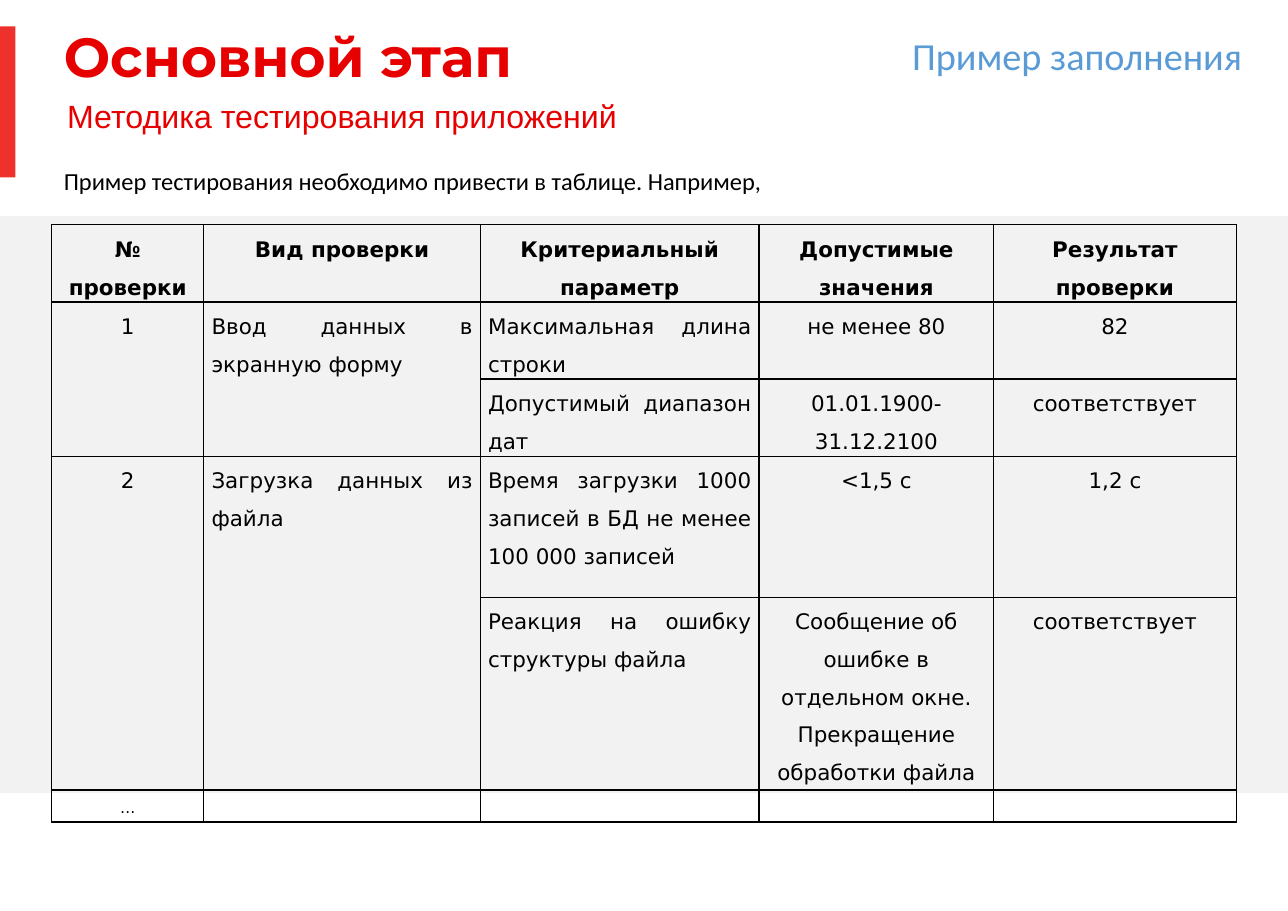
"""Build the slide with a sample table of software test checks."""
import dataclasses
import typing

import lxml.etree
import pptx
import pptx.dml.color
import pptx.enum.shapes
import pptx.enum.text
import pptx.oxml.ns
import pptx.shapes.shapetree
import pptx.table
import pptx.text.text
import pptx.util

SCALE = 9144
ALIGN = pptx.enum.text.PP_ALIGN
ANCHOR = pptx.enum.text.MSO_ANCHOR


@dataclasses.dataclass(frozen=True)
class Theme:
    band: str = "F2F2F2"
    bar: str = "EE312C"
    red: str = "E60000"
    blue: str = "5B9BD5"
    ink: str = "000000"
    title: int = 36
    hint: int = 25
    topic: int = 21
    intro: int = 16
    cell: int = 14
    small: int = 10
    rule: int = 1


class Block(typing.NamedTuple):
    box: tuple[int, int, int, int]
    fill: str


class Label(typing.NamedTuple):
    box: tuple[int, int, int, int]
    text: str
    face: str
    size: int
    color: str
    pad: tuple[int, int] = (11, 6)
    anchor: ANCHOR = ANCHOR.TOP
    align: ALIGN = ALIGN.LEFT
    space: float = 1.0
    bold: bool = False


THEME = Theme()
BLOCKS = [
    Block((0, 196, 1169, 524), THEME.band),
    Block((0, 24, 14, 137), THEME.bar),
]
LABELS = [
    Label((58, 27, 700, 56), "Основной этап", "Montserrat", THEME.title, THEME.red,
          pad=(0, 0), space=0.9, bold=True),
    Label((47, 145, 1074, 40),
          "Пример тестирования необходимо привести в таблице. Например,",
          "Calibri", THEME.intro, THEME.ink),
    Label((50, 47, 1064, 81), "Методика тестирования приложений", "Arial",
          THEME.topic, THEME.red, anchor=ANCHOR.BOTTOM, space=0.8),
    Label((805, 24, 345, 52), "Пример заполнения", "Calibri", THEME.hint,
          THEME.blue, pad=(10, 5), align=ALIGN.CENTER),
]
PLACE = (47, 204)
COLS = [138, 251, 253, 213, 220]
ROWS = [68, 69, 69, 128, 171, 29]
CELLS = [
    ["№ проверки", "Вид проверки", "Критериальный параметр",
     "Допустимые значения", "Результат проверки"],
    ["1", "Ввод данных в экранную форму", "Максимальная длина строки",
     "не менее 80", "82"],
    ["", "", "Допустимый диапазон дат", "01.01.1900-31.12.2100", "соответствует"],
    ["2", "Загрузка данных из файла",
     "Время загрузки 1000 записей в БД не менее 100 000 записей",
     "<1,5 с", "1,2 с"],
    ["", "", "Реакция на ошибку структуры файла",
     "Сообщение об ошибке в отдельном окне.\nПрекращение обработки файла",
     "соответствует"],
    ["…", "", "", "", ""],
]


def px(size: int) -> pptx.util.Emu:
    """Turn a length in px into EMU."""
    return pptx.util.Emu(size * SCALE)


def rgb(code: str) -> pptx.dml.color.RGBColor:
    """Turn a hex code into a colour."""
    return pptx.dml.color.RGBColor.from_string(code)


def write(frame: pptx.text.text.TextFrame, text: str, *, face: str, size: int,
          color: str, align: ALIGN, space: float, bold: bool = False) -> None:
    """Fill a text frame, one paragraph for each line of text."""
    for rank, line in enumerate(text.split("\n")):
        para = frame.add_paragraph() if rank else frame.paragraphs[0]
        para.alignment = align
        para.line_spacing = space
        if not line:
            lxml.etree.SubElement(para._p, pptx.oxml.ns.qn("a:endParaRPr"),
                                  sz=str(size * 100))
            continue
        run = para.add_run()
        run.text = line
        run.font.name = face
        run.font.size = pptx.util.Pt(size)
        run.font.bold = bold
        run.font.color.rgb = rgb(color)


def draw_block(shapes: pptx.shapes.shapetree.SlideShapes, block: Block) -> None:
    """Draw a plain filled block."""
    shape = shapes.add_shape(pptx.enum.shapes.MSO_SHAPE.RECTANGLE, *map(px, block.box))
    shape.shadow.inherit = False
    shape.fill.solid()
    shape.fill.fore_color.rgb = rgb(block.fill)
    shape.line.fill.background()


def draw_label(shapes: pptx.shapes.shapetree.SlideShapes, label: Label) -> None:
    """Draw a text box."""
    frame = shapes.add_textbox(*map(px, label.box)).text_frame
    frame.word_wrap = True
    frame.vertical_anchor = label.anchor
    frame.margin_left = frame.margin_right = px(label.pad[0])
    frame.margin_top = frame.margin_bottom = px(label.pad[1])
    write(frame, label.text, face=label.face, size=label.size, color=label.color,
          align=label.align, space=label.space, bold=label.bold)


def frame_cell(cell: pptx.table._Cell) -> None:
    """Clear the fill of a cell and rule its four sides."""
    cell.fill.background()
    props = cell._tc.get_or_add_tcPr()
    name = pptx.oxml.ns.qn
    for rank, side in enumerate("LRTB"):
        line = lxml.etree.Element(name(f"a:ln{side}"),
                                  w=str(pptx.util.Pt(THEME.rule)))
        fill = lxml.etree.SubElement(line, name("a:solidFill"))
        lxml.etree.SubElement(fill, name("a:srgbClr"), val=THEME.ink)
        props.insert(rank, line)


def draw_table(shapes: pptx.shapes.shapetree.SlideShapes) -> None:
    """Draw the table of checks."""
    sizes = (*PLACE, sum(COLS), sum(ROWS))
    table = shapes.add_table(len(ROWS), len(COLS), *map(px, sizes)).table
    table.first_row = table.horz_banding = False
    for col, width in zip(table.columns, COLS):
        col.width = px(width)
    for row, height in zip(table.rows, ROWS):
        row.height = px(height)
    last = len(ROWS) - 1
    for down, line in enumerate(CELLS):
        for along, text in enumerate(line):
            cell = table.cell(down, along)
            cell.margin_left = cell.margin_right = px(7)
            cell.margin_top = cell.margin_bottom = 0
            frame_cell(cell)
            left = down > 0 and along in (1, 2)
            write(cell.text_frame, text, face="DejaVu Sans",
                  size=THEME.small if down == last else THEME.cell,
                  color=THEME.ink, align=ALIGN.JUSTIFY if left else ALIGN.CENTER,
                  space=1.5, bold=down == 0)
    for down in (1, 3):
        for along in (0, 1):
            table.cell(down, along).merge(table.cell(down + 1, along))


def main() -> None:
    """Build and save the slide."""
    deck = pptx.Presentation()
    deck.slide_width, deck.slide_height = px(1169), px(827)
    shapes = deck.slides.add_slide(deck.slide_layouts[6]).shapes
    for block in BLOCKS:
        draw_block(shapes, block)
    for label in LABELS:
        draw_label(shapes, label)
    draw_table(shapes)
    deck.save("out.pptx")


if __name__ == "__main__":
    main()
